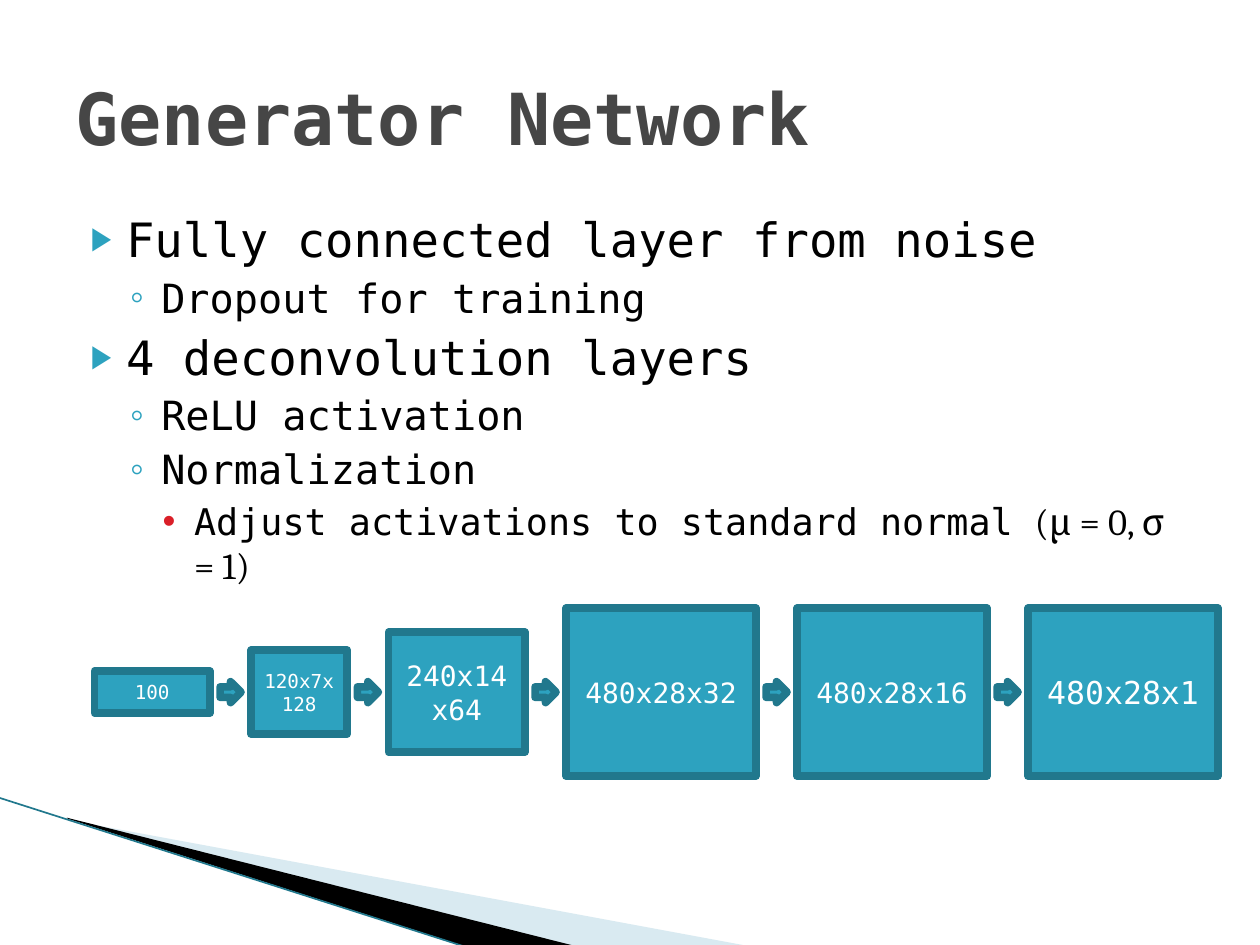
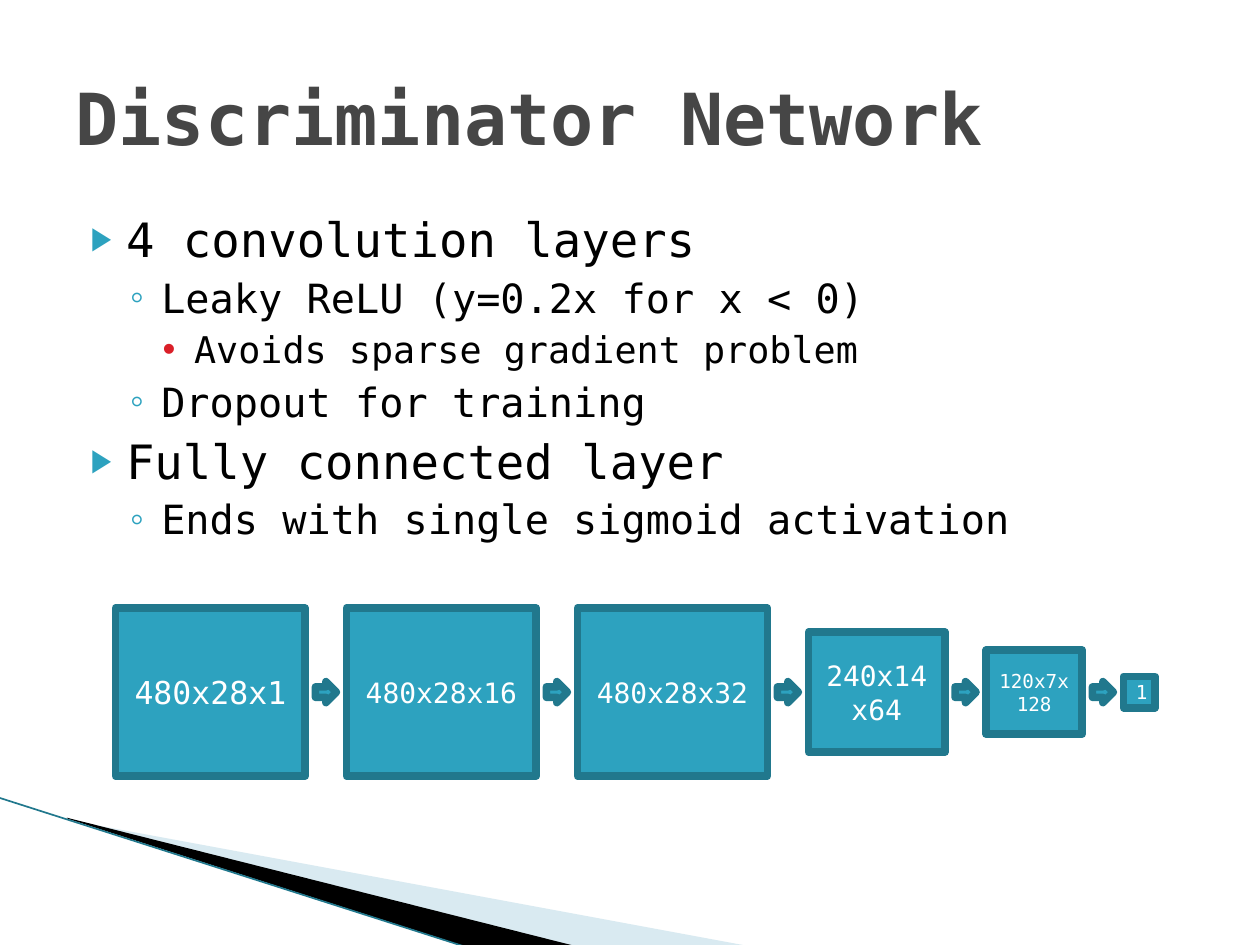
from pptx import Presentation
from pptx.dml.color import RGBColor
from pptx.enum.shapes import MSO_CONNECTOR, MSO_SHAPE
from pptx.enum.text import MSO_ANCHOR, MSO_AUTO_SIZE, PP_ALIGN
from pptx.oxml.ns import qn
from pptx.util import Pt
from lxml import etree

RECTANGLE, ARROW = MSO_SHAPE.RECTANGLE, MSO_SHAPE.RIGHT_ARROW
STRAIGHT = MSO_CONNECTOR.STRAIGHT
LEFT, CENTER = PP_ALIGN.LEFT, PP_ALIGN.CENTER
TOP, MIDDLE = MSO_ANCHOR.TOP, MSO_ANCHOR.MIDDLE
NO_AUTOFIT = MSO_AUTO_SIZE.NONE

# Content: list items are (level, text, optional formula)
GENERATOR_POINTS = [
    (0, "Fully connected layer from noise"),
    (1, "Dropout for training"),
    (0, "4 deconvolution layers"),
    (1, "ReLU activation"),
    (1, "Normalization"),
    (2, "Adjust activations to standard normal ", "(μ = 0, σ = 1)"),
]
DISCRIMINATOR_POINTS = [
    (0, "4 convolution layers"),
    (1, "Leaky ReLU (y=0.2x for x < 0)"),
    (2, "Avoids sparse gradient problem"),
    (1, "Dropout for training"),
    (0, "Fully connected layer"),
    (1, "Ends with single sigmoid activation"),
]
# Layer label: (width, height, text size)
LAYERS = {
    "100": (66, 24, 11),
    "120x7x128": (55, 48, 11),
    "240x14x64": (78, 68.5, 16),
    "480x28x32": (108.5, 96, 16),
    "480x28x16": (108.5, 96, 16),
    "480x28x1": (108.5, 96, 18),
    "1": (18, 18, 11),
}
GENERATOR_LAYERS = ["100", "120x7x128", "240x14x64",
                    "480x28x32", "480x28x16", "480x28x1"]
DISCRIMINATOR_LAYERS = GENERATOR_LAYERS[:0:-1] + ["1"]
# Title, points, layers, left edge of the layer row
SLIDES = [
    ("Generator Network", GENERATOR_POINTS, GENERATOR_LAYERS, 54),
    ("Discriminator Network", DISCRIMINATOR_POINTS, DISCRIMINATOR_LAYERS, 66),
]

# Shared style
MONO, MATH = "DejaVu Sans Mono", "Cambria"
TEAL, DARK_TEAL, RED = "2DA2BF", "21788D", "DA1F28"
PALE_BLUE, GREY, BLACK, WHITE = "A0CBDC", "464646", "000000", "FFFFFF"
# Per level: text size, space before, margin, indent, bullet, colour, bullet %
LEVELS = [
    (27, 4, 28.8, -20.16, "▶", TEAL, 68),
    (23, 3.2, 48.96, -18, "◦", TEAL, 100),
    (21, 3.5, 67.68, -18, "•", RED, 100),
]
TITLE_BOX = (36, 21.6, 648, 90)
BODY_BOX = (36, 116.64, 648, 356.4)
ROW_MIDDLE, LAYER_GAP, ARROW_SIZE = 395.5, 23.5, 12
# Corner wedges: points, colour, opacity %
WEDGES = [
    ([(39.6, 468.7), (428.4, 540.7), (328.3, 540.7), (39.6, 468)], PALE_BLUE, 40),
    ([(38.2, 467.3), (329, 540.7), (267.8, 541.4), (38.9, 468)], BLACK, 100),
]
CORNER_LINE = (-0.7, 455.8, 267.1, 541.4)


def rgb(code):
    return RGBColor.from_string(code)


def points(values):
    return [Pt(value) for value in values]


def set_font(paragraph, size, color, name=MONO, bold=False):
    font = paragraph.font
    font.size, font.name, font.bold = Pt(size), name, bold
    font.color.rgb = rgb(color)


def place(placeholder, box, anchor):
    placeholder.left, placeholder.top, placeholder.width, placeholder.height = points(box)
    frame = placeholder.text_frame
    frame.auto_size, frame.vertical_anchor = NO_AUTOFIT, anchor
    return frame


def add_corner(slide):
    for outline, color, opacity in WEDGES:
        start, *rest = [points(corner) for corner in outline]
        builder = slide.shapes.build_freeform(*start)
        builder.add_line_segments(rest, close=True)
        wedge = builder.convert_to_shape()
        wedge.shadow.inherit = False
        wedge.fill.solid()
        wedge.fill.fore_color.rgb = rgb(color)
        wedge.line.fill.background()
        if opacity < 100:
            fill_color = wedge._element.spPr.find(".//" + qn("a:srgbClr"))
            etree.SubElement(fill_color, qn("a:alpha"), val=str(opacity * 1000))
    edge = slide.shapes.add_connector(STRAIGHT, *points(CORNER_LINE))
    edge.line.color.rgb, edge.line.width = rgb(DARK_TEAL), Pt(0.95)
    etree.SubElement(edge._element.spPr, qn("a:effectLst"))


def add_bullet(paragraph, margin, indent, symbol, color, percent):
    properties = paragraph._p.get_or_add_pPr()
    properties.set("marL", str(Pt(margin)))
    properties.set("indent", str(Pt(indent)))
    bullet_color = etree.SubElement(properties, qn("a:buClr"))
    etree.SubElement(bullet_color, qn("a:srgbClr"), val=color)
    etree.SubElement(properties, qn("a:buSzPct"), val=str(percent * 1000))
    etree.SubElement(properties, qn("a:buChar"), char=symbol)


def fill_points(frame, items):
    for index, (level, text, *formula) in enumerate(items):
        paragraph = frame.add_paragraph() if index else frame.paragraphs[0]
        size, space, *bullet = LEVELS[level]
        paragraph.level = level
        add_bullet(paragraph, *bullet)
        paragraph.space_before = Pt(space if index else 0)
        set_font(paragraph, size, BLACK)
        paragraph.add_run().text = text
        for part in formula:
            run = paragraph.add_run()
            run.text, run.font.name = part, MATH


def add_block(slide, kind, left, width, height):
    block = slide.shapes.add_shape(
        kind, *points((left, ROW_MIDDLE - height / 2, width, height)))
    block.shadow.inherit = False
    block.fill.solid()
    block.fill.fore_color.rgb = rgb(TEAL)
    block.line.color.rgb, block.line.width = rgb(DARK_TEAL), Pt(4.33)
    etree.SubElement(block.line._get_or_add_ln(), qn("a:round"))
    return block


def add_layers(slide, labels, left):
    for index, label in enumerate(labels):
        width, height, size = LAYERS[label]
        if index:
            arrow_left = left - (LAYER_GAP + ARROW_SIZE) / 2
            add_block(slide, ARROW, arrow_left, ARROW_SIZE, ARROW_SIZE)
        frame = add_block(slide, RECTANGLE, left, width, height).text_frame
        frame.word_wrap, frame.vertical_anchor = True, MIDDLE
        paragraph = frame.paragraphs[0]
        paragraph.text, paragraph.alignment = label, CENTER
        set_font(paragraph, size, WHITE)
        left += width + LAYER_GAP


def main():
    deck = Presentation()
    deck.slide_width, deck.slide_height = Pt(720), Pt(540)
    for title, items, labels, row_left in SLIDES:
        slide = deck.slides.add_slide(deck.slide_layouts[1])
        add_corner(slide)
        heading = place(slide.shapes.title, TITLE_BOX, MIDDLE).paragraphs[0]
        heading.text, heading.alignment = title, LEFT
        set_font(heading, 41, GREY, bold=True)
        fill_points(place(slide.placeholders[1], BODY_BOX, TOP), items)
        add_layers(slide, labels, row_left)
    deck.save("out.pptx")


if __name__ == "__main__":
    main()
